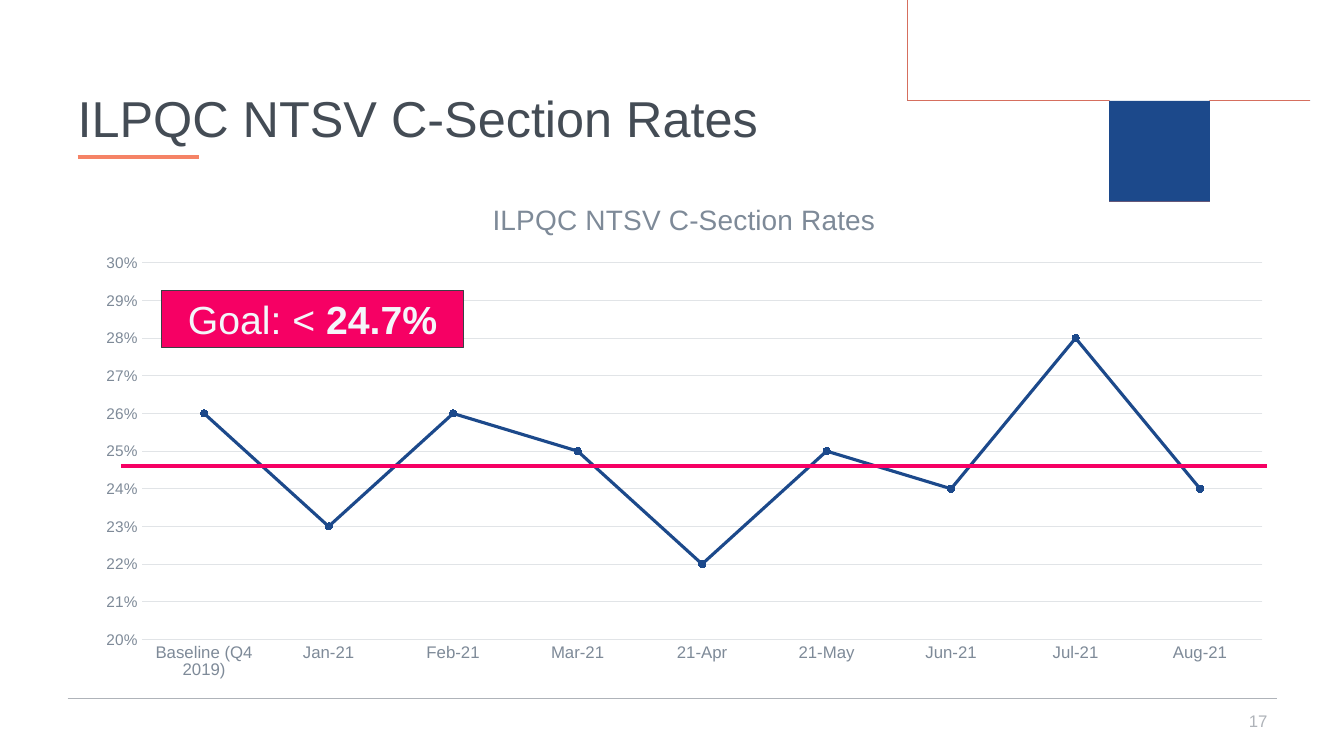
"""Build the slide on ILPQC NTSV C-section rates."""
from lxml.etree import SubElement
from pptx import Presentation
from pptx.chart.data import CategoryChartData
from pptx.dml.color import RGBColor
from pptx.enum.chart import XL_CHART_TYPE, XL_MARKER_STYLE, XL_TICK_MARK
from pptx.enum.shapes import MSO_CONNECTOR, MSO_SHAPE
from pptx.enum.text import MSO_ANCHOR, MSO_AUTO_SIZE, PP_ALIGN
from pptx.oxml.ns import qn
from pptx.util import Inches, Pt

BLUE = RGBColor(0x1C, 0x49, 0x8B)
ORANGE = RGBColor(0xF0, 0x41, 0x15)
SALMON = RGBColor(0xF5, 0x83, 0x66)
PINK = RGBColor(0xF6, 0x00, 0x64)
INK = RGBColor(0x44, 0x4C, 0x55)
OUTLINE = RGBColor(0x3C, 0x40, 0x45)
SLATE = RGBColor(0x7E, 0x8A, 0x98)
GRAY = RGBColor(0xAF, 0xB3, 0xB9)
GRID = RGBColor(0xE1, 0xE4, 0xE7)
PALE = RGBColor(0xF4, 0xF6, 0xFA)

HEADING = "ILPQC NTSV C-Section Rates"
RATES = {
    "Baseline (Q4 2019)": 0.26, "Jan-21": 0.23, "Feb-21": 0.26,
    "Mar-21": 0.25, "21-Apr": 0.22, "21-May": 0.25,
    "Jun-21": 0.24, "Jul-21": 0.28, "Aug-21": 0.24,
}
PLOT_AREA = {"x": 0.05, "y": 0.16, "w": 0.93, "h": 0.74}

ORANGE_TOP = [(8.05, 0), (8.82, 0.54), (9.58, 0.99), (10.39, 1.33),
              (10.81, 1.44), (11.25, 1.5), (11.68, 1.52), (12.12, 1.49),
              (12.56, 1.43), (12.93, 1.33), (13.33, 1.2)]
ORANGE_BOTTOM = [(7.86, 0), (8.29, 0.29), (8.78, 0.62), (9.55, 1.06),
                 (10.37, 1.39), (10.8, 1.49), (11.24, 1.55), (11.69, 1.56),
                 (12.13, 1.52), (12.56, 1.45), (12.94, 1.35), (13.33, 1.21)]
BLUE_TOP = [(8.27, 0), (8.79, 0.38), (9.54, 0.86), (10.34, 1.23),
            (11.2, 1.43), (12.09, 1.45), (12.53, 1.4), (12.91, 1.32),
            (13.33, 1.19)]
BLUE_BOTTOM = [(8.02, 0), (8.34, 0.23), (8.71, 0.49), (9.48, 0.96),
               (10.31, 1.31), (11.19, 1.5), (11.64, 1.52), (12.09, 1.49),
               (12.53, 1.43), (12.92, 1.34), (13.33, 1.2)]


def set_font(font, size, color, bold=False):
    """Apply the Arial text style."""
    for name, value in {"name": "Arial", "size": Pt(size), "bold": bold}.items():
        setattr(font, name, value)
    font.color.rgb = color


def set_line(line, color, width):
    """Give a line a solid colour and a width in points."""
    line.color.rgb = color
    line.width = Pt(width)


def smooth(knots, steps=8):
    """Return points on a smooth curve through the knots."""
    padded = [knots[0], *knots, knots[-1]]
    points = [knots[0]]
    for a, b, c, d in zip(padded, padded[1:], padded[2:], padded[3:]):
        for step in range(1, steps + 1):
            t = step / steps
            points.append(tuple(
                q + t * ((r - p) + t * ((2 * p - 5 * q + 4 * r - s)
                                        + t * (3 * q - p - 3 * r + s))) / 2
                for p, q, r, s in zip(a, b, c, d)))
    return points


def add_ribbon(slide, top, bottom):
    """Draw a swoosh between two curved edges and return it."""
    start, *rest = smooth(top) + smooth(bottom)[::-1]
    builder = slide.shapes.build_freeform(*start, scale=Inches(1))
    builder.add_line_segments(rest, close=True)
    ribbon = builder.convert_to_shape()
    ribbon.shadow.inherit = False
    ribbon.line.fill.background()
    return ribbon


def add_swooshes(slide):
    """Draw the orange ribbon with the blue one over it."""
    orange = add_ribbon(slide, ORANGE_TOP, ORANGE_BOTTOM)
    orange.fill.gradient()
    orange.fill.gradient_angle = 0
    stops = zip(orange.fill.gradient_stops, (ORANGE, SALMON), (0, 0.2))
    for stop, color, position in stops:
        stop.color.rgb = color
        stop.position = position
    blue = add_ribbon(slide, BLUE_TOP, BLUE_BOTTOM)
    blue.fill.solid()
    blue.fill.fore_color.rgb = BLUE


def add_rule(slide, left, right, y, color, width):
    """Draw a horizontal line."""
    rule = slide.shapes.add_connector(
        MSO_CONNECTOR.STRAIGHT, Inches(left), Inches(y), Inches(right), Inches(y))
    set_line(rule.line, color, width)
    SubElement(rule._element.spPr, qn("a:effectLst"))


def set_title(slide):
    """Place and format the slide title."""
    title = slide.shapes.title
    place = {"left": 0.67, "top": 0.48, "width": 12, "height": 1.45}
    for side, inches in place.items():
        setattr(title, side, Inches(inches))
    frame = title.text_frame
    frame.text = HEADING
    frame.auto_size = MSO_AUTO_SIZE.NONE
    frame.vertical_anchor = MSO_ANCHOR.MIDDLE
    heading = frame.paragraphs[0]
    heading.alignment = PP_ALIGN.LEFT
    heading.line_spacing = 0.9
    set_font(heading.runs[0].font, 36, INK)


def set_plot_area(chart):
    """Fix the inner plot area as fractions of the chart."""
    plot_area = chart._chartSpace.chart.plotArea
    for old in plot_area.findall(qn("c:layout")):
        plot_area.remove(old)
    layout = SubElement(plot_area, qn("c:layout"))
    plot_area.insert(0, layout)
    manual = SubElement(layout, qn("c:manualLayout"))
    settings = {"layoutTarget": "inner", "xMode": "edge", "yMode": "edge", **PLOT_AREA}
    for name, value in settings.items():
        SubElement(manual, qn(f"c:{name}")).set("val", str(value))


def format_axes(chart):
    """Style the month axis and the percentage axis."""
    months, percent = chart.category_axis, chart.value_axis
    for axis, size in ((months, 12), (percent, 11)):
        axis.major_tick_mark = axis.minor_tick_mark = XL_TICK_MARK.NONE
        set_font(axis.tick_labels.font, size, SLATE)
    set_line(months.format.line, GRID, 0.75)
    percent.format.line.fill.background()
    scale = {"minimum_scale": 0.2, "maximum_scale": 0.3, "major_unit": 0.01}
    for name, value in scale.items():
        setattr(percent, name, value)
    set_line(percent.major_gridlines.format.line, GRID, 0.75)
    percent.tick_labels.number_format = "0%"
    percent.tick_labels.number_format_is_linked = False


def add_rate_chart(slide):
    """Add the line chart of monthly rates."""
    data = CategoryChartData(number_format="0%")
    data.categories = list(RATES)
    data.add_series("Series 1", list(RATES.values()))
    chart = slide.shapes.add_chart(
        XL_CHART_TYPE.LINE_MARKERS, Inches(0.81), Inches(1.8),
        Inches(11.95), Inches(5.05), data).chart
    set_font(chart.font, 11, INK)
    chart.has_legend = False
    chart.has_title = True
    chart.chart_title.include_in_layout = False
    caption = chart.chart_title.text_frame
    caption.text = HEADING
    set_font(caption.paragraphs[0].runs[0].font, 20, SLATE)
    set_plot_area(chart)
    format_axes(chart)
    chart.plots[0].vary_by_categories = False
    rates = chart.plots[0].series[0]
    rates.smooth = False
    set_line(rates.format.line, BLUE, 2.25)
    rates.marker.style = XL_MARKER_STYLE.CIRCLE
    rates.marker.size = 5
    rates.marker.format.fill.solid()
    rates.marker.format.fill.fore_color.rgb = BLUE
    set_line(rates.marker.format.line, BLUE, 0.75)


def add_page_number(slide):
    """Write the page number at the lower right."""
    frame = slide.shapes.add_textbox(
        Inches(9.67), Inches(6.95), Inches(3), Inches(0.4)).text_frame
    frame.word_wrap = True
    frame.vertical_anchor = MSO_ANCHOR.MIDDLE
    frame.text = "17"
    frame.paragraphs[0].alignment = PP_ALIGN.RIGHT
    set_font(frame.paragraphs[0].runs[0].font, 12, GRAY)


def add_goal(slide):
    """Draw the pink box that states the goal."""
    goal = slide.shapes.add_shape(
        MSO_SHAPE.RECTANGLE, Inches(1.6), Inches(2.88), Inches(3), Inches(0.57))
    goal.shadow.inherit = False
    goal.fill.solid()
    goal.fill.fore_color.rgb = PINK
    set_line(goal.line, OUTLINE, 0.75)
    goal.text_frame.word_wrap = True
    goal.text_frame.auto_size = MSO_AUTO_SIZE.SHAPE_TO_FIT_TEXT
    wording = goal.text_frame.paragraphs[0]
    wording.alignment = PP_ALIGN.CENTER
    for text, bold in (("Goal: < ", False), ("24.7%", True)):
        run = wording.add_run()
        run.text = text
        set_font(run.font, 28, PALE, bold)


def main():
    """Build and save the slide."""
    deck = Presentation()
    deck.slide_width, deck.slide_height = Inches(13.33), Inches(7.5)
    slide = deck.slides.add_slide(deck.slide_layouts[5])
    add_swooshes(slide)
    add_rule(slide, 0.67, 12.67, 6.93, GRAY, 0.5)
    add_rule(slide, 0.77, 1.97, 1.56, SALMON, 2.5)
    set_title(slide)
    add_rate_chart(slide)
    add_page_number(slide)
    add_rule(slide, 1.2, 12.57, 4.62, PINK, 3)
    add_goal(slide)
    deck.save("out.pptx")


if __name__ == "__main__":
    main()
